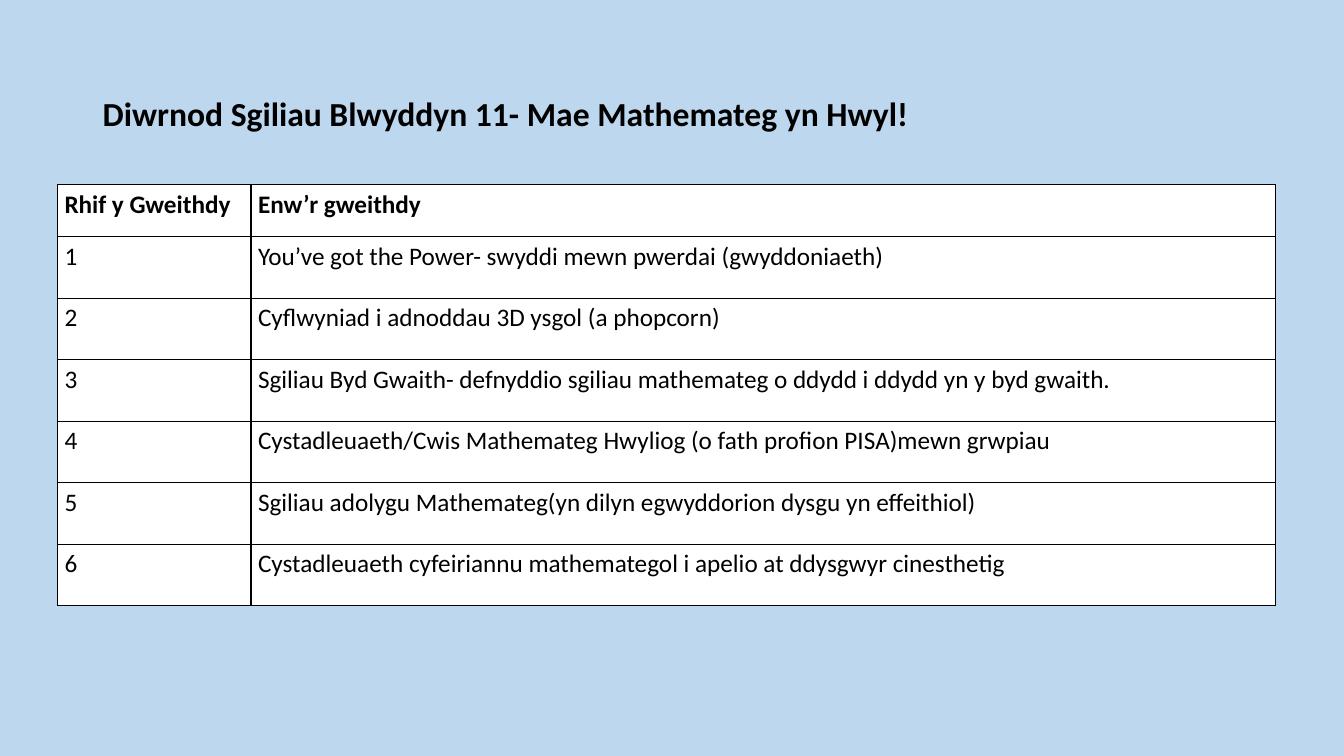
from pptx import Presentation
from pptx.dml.color import RGBColor
from pptx.enum.text import MSO_ANCHOR
from pptx.oxml import parse_xml
from pptx.oxml.ns import nsdecls
from pptx.util import Inches, Pt

TITLE = "Diwrnod Sgiliau Blwyddyn 11- Mae Mathemateg yn Hwyl!"
HEADINGS = ("Rhif y Gweithdy", "Enw’r gweithdy")
WORKSHOPS = [
    "You’ve got the Power- swyddi mewn pwerdai (gwyddoniaeth)",
    "Cyflwyniad i adnoddau 3D ysgol (a phopcorn)",
    "Sgiliau Byd Gwaith- defnyddio sgiliau mathemateg o ddydd i ddydd yn y byd gwaith.",
    "Cystadleuaeth/Cwis Mathemateg Hwyliog (o fath profion PISA)mewn grwpiau",
    "Sgiliau adolygu Mathemateg(yn dilyn egwyddorion dysgu yn effeithiol)",
    "Cystadleuaeth cyfeiriannu mathemategol i apelio at ddysgwyr cinesthetig",
]

SKY = RGBColor(0xBD, 0xD7, 0xEE)
WHITE = RGBColor(0xFF, 0xFF, 0xFF)
BLACK = RGBColor(0x00, 0x00, 0x00)
FONT = "Calibri"

SLIDE_SIZE = (13.33, 7.5)
TITLE_BOX = (0.92, 0.87, 8.41, 0.5)
TABLE_LEFT, TABLE_TOP = 0.57, 1.83
COLUMN_WIDTHS = (1.92, 10.16)
HEADING_HEIGHT, WORKSHOP_HEIGHT = 0.52, 0.61


def add_words(paragraph, words, size, bold):
    run = paragraph.add_run()
    run.text = words
    run.font.name = FONT
    run.font.size = Pt(size)
    run.font.bold = bold
    run.font.color.rgb = BLACK


def add_borders(cell):
    properties = cell._tc.get_or_add_tcPr()
    for position, side in enumerate(("lnL", "lnR", "lnT", "lnB")):
        properties.insert(position, parse_xml(
            f'<a:{side} {nsdecls("a")} w="{Pt(1)}"><a:solidFill>'
            f'<a:srgbClr val="{BLACK}"/></a:solidFill></a:{side}>'))


def fill_cell(cell, words, bold):
    cell.fill.solid()
    cell.fill.fore_color.rgb = WHITE
    cell.margin_left = cell.margin_right = Inches(0.07)
    cell.margin_top = cell.margin_bottom = 0
    paragraph = cell.text_frame.paragraphs[0]
    paragraph.line_spacing = 1.15
    paragraph.space_after = Pt(10)
    add_words(paragraph, words, 18, bold)
    add_borders(cell)


def add_workshops(slide):
    rows = [HEADINGS] + [(str(n), name) for n, name in enumerate(WORKSHOPS, 1)]
    heights = [HEADING_HEIGHT] + [WORKSHOP_HEIGHT] * len(WORKSHOPS)
    table = slide.shapes.add_table(
        len(rows), len(HEADINGS), Inches(TABLE_LEFT), Inches(TABLE_TOP),
        Inches(sum(COLUMN_WIDTHS)), Inches(sum(heights))).table
    for column, width in zip(table.columns, COLUMN_WIDTHS):
        column.width = Inches(width)
    for r, (row, height) in enumerate(zip(rows, heights)):
        table.rows[r].height = Inches(height)
        for c, words in enumerate(row):
            fill_cell(table.cell(r, c), words, r == 0)


def add_title(slide):
    frame = slide.shapes.add_textbox(*map(Inches, TITLE_BOX)).text_frame
    frame.word_wrap = True
    frame.vertical_anchor = MSO_ANCHOR.MIDDLE
    add_words(frame.paragraphs[0], TITLE, 24, True)


def main():
    deck = Presentation()
    deck.slide_width, deck.slide_height = map(Inches, SLIDE_SIZE)
    slide = deck.slides.add_slide(deck.slide_layouts[6])
    slide.background.fill.solid()
    slide.background.fill.fore_color.rgb = SKY
    add_workshops(slide)
    add_title(slide)
    deck.save("out.pptx")


if __name__ == "__main__":
    main()
